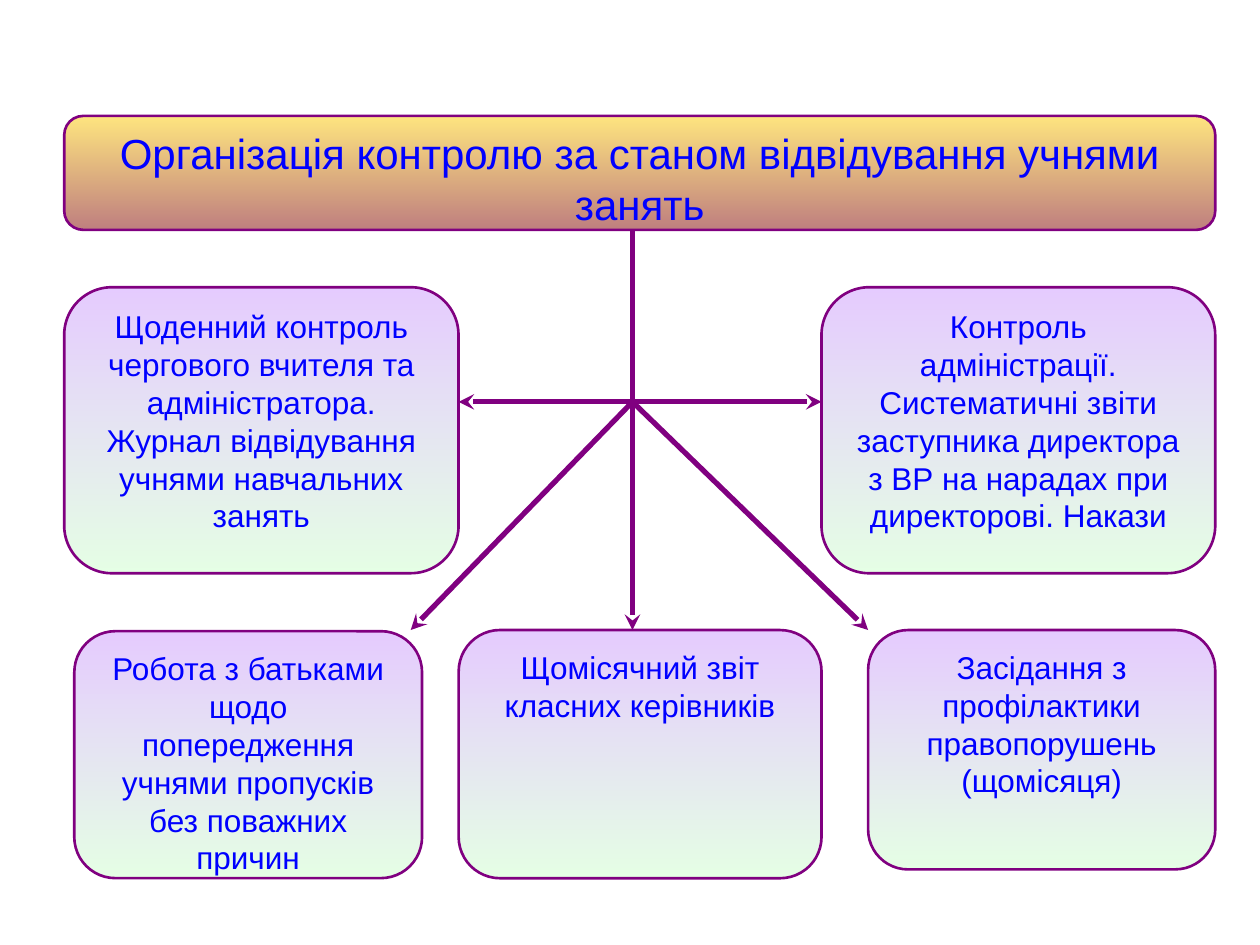
from lxml import etree
from pptx import Presentation
from pptx import util as u
from pptx.dml.color import RGBColor
from pptx.enum import shapes, text
from pptx.oxml.ns import qn

COLORS = {
    "text": "0000FF",
    "line": "800080",
    "title_top": "FFCC00",
    "title_bottom": "800000",
    "box_top": "CC99FF",
    "box_bottom": "CCFFCC",
}
WIDTH, HEIGHT = u.Inches(10), u.Inches(7.5)

# Grid lines, in percent of the slide's width and height
LEFT, INNER_LEFT, HUB_X, INNER_RIGHT, RIGHT = 5.1, 36.4, 50.2, 65.2, 96.45
TITLE_TOP, TITLE_BOTTOM = 12.27, 24.33
MIDDLE_TOP, HUB_Y, MIDDLE_BOTTOM = 30.4, 42.53, 60.67
LOWER_TOP, LOWER_BOTTOM = 66.67, 92.93
LOWER_LEFT_EDGE, LOWER_RIGHT_EDGE = 32.6, 68.9

# Left, top, right, bottom and wording of each box
BOXES = [
    (LEFT, MIDDLE_TOP, INNER_LEFT, MIDDLE_BOTTOM,
     "Щоденний контроль чергового вчителя та адміністратора. "
     "Журнал відвідування учнями навчальних занять"),
    (INNER_RIGHT, MIDDLE_TOP, RIGHT, MIDDLE_BOTTOM,
     "Контроль адміністрації. Систематичні звіти заступника директора "
     "з ВР на нарадах при директорові. Накази"),
    (5.9, 66.8, 33.5, LOWER_BOTTOM,
     "Робота з батьками щодо попередження учнями пропусків "
     "без поважних причин"),
    (INNER_LEFT, LOWER_TOP, INNER_RIGHT, LOWER_BOTTOM,
     "Щомісячний звіт класних керівників"),
    (LOWER_RIGHT_EDGE, LOWER_TOP, RIGHT, 92,
     "Засідання з профілактики правопорушень (щомісяця)"),
]

# Start, end and arrowheads of each connector
ARROWS = [
    ((HUB_X, TITLE_BOTTOM), (HUB_X, LOWER_TOP), ["tailEnd"]),
    ((INNER_LEFT, HUB_Y), (INNER_RIGHT, HUB_Y), ["headEnd", "tailEnd"]),
    ((HUB_X, HUB_Y), (LOWER_LEFT_EDGE, LOWER_TOP), ["tailEnd"]),
    ((HUB_X, HUB_Y), (LOWER_RIGHT_EDGE, LOWER_TOP), ["tailEnd"]),
]


def color(name):
    return RGBColor.from_string(COLORS[name])


def across(share):
    return round(WIDTH * share / 100)


def down(share):
    return round(HEIGHT * share / 100)


def fill_gradient(shape, names):
    """Half-transparent gradient running from top to bottom."""
    shape.fill.gradient()
    shape.fill.gradient_angle = 270
    for stop, name in zip(shape.fill.gradient_stops, names):
        stop.color.rgb = color(name)
    for tint in shape.element.spPr.iter(qn("a:srgbClr")):
        etree.SubElement(tint, qn("a:alpha"), val="50000")


def add_box(slide, left, top, right, bottom, wording, size, fill):
    shape = slide.shapes.add_shape(
        shapes.MSO_SHAPE.ROUNDED_RECTANGLE, across(left), down(top),
        across(right - left), down(bottom - top))
    shape.shadow.inherit = False
    fill_gradient(shape, fill)
    shape.line.color.rgb = color("line")
    shape.line.width = u.Pt(1.5)

    frame = shape.text_frame
    frame.word_wrap = True
    frame.vertical_anchor = text.MSO_ANCHOR.TOP
    paragraph = frame.paragraphs[0]
    paragraph.alignment = text.PP_ALIGN.CENTER
    run = paragraph.add_run()
    run.text = wording
    run.font.name = "Arial"
    run.font.size = u.Pt(size)
    run.font.color.rgb = color("text")


def add_arrow(slide, start, end, heads):
    connector = slide.shapes.add_connector(
        shapes.MSO_CONNECTOR.STRAIGHT, across(start[0]), down(start[1]),
        across(end[0]), down(end[1]))
    connector.line.color.rgb = color("line")
    connector.line.width = u.Pt(3)
    properties = connector.element.spPr
    outline = properties.find(qn("a:ln"))
    for head in heads:
        etree.SubElement(outline, qn(f"a:{head}"), type="stealth")
    etree.SubElement(properties, qn("a:effectLst"))


def main():
    presentation = Presentation()
    presentation.slide_width, presentation.slide_height = WIDTH, HEIGHT
    slide = presentation.slides.add_slide(presentation.slide_layouts[6])

    # Kinds of control
    for box in BOXES:
        add_box(slide, *box, size=18, fill=("box_top", "box_bottom"))

    # Title bar
    add_box(slide, LEFT, TITLE_TOP, RIGHT, TITLE_BOTTOM,
            "Організація контролю за станом відвідування учнями занять",
            size=24, fill=("title_top", "title_bottom"))

    # Arrows from the title to the boxes
    for arrow in ARROWS:
        add_arrow(slide, *arrow)

    presentation.save("out.pptx")


if __name__ == "__main__":
    main()
